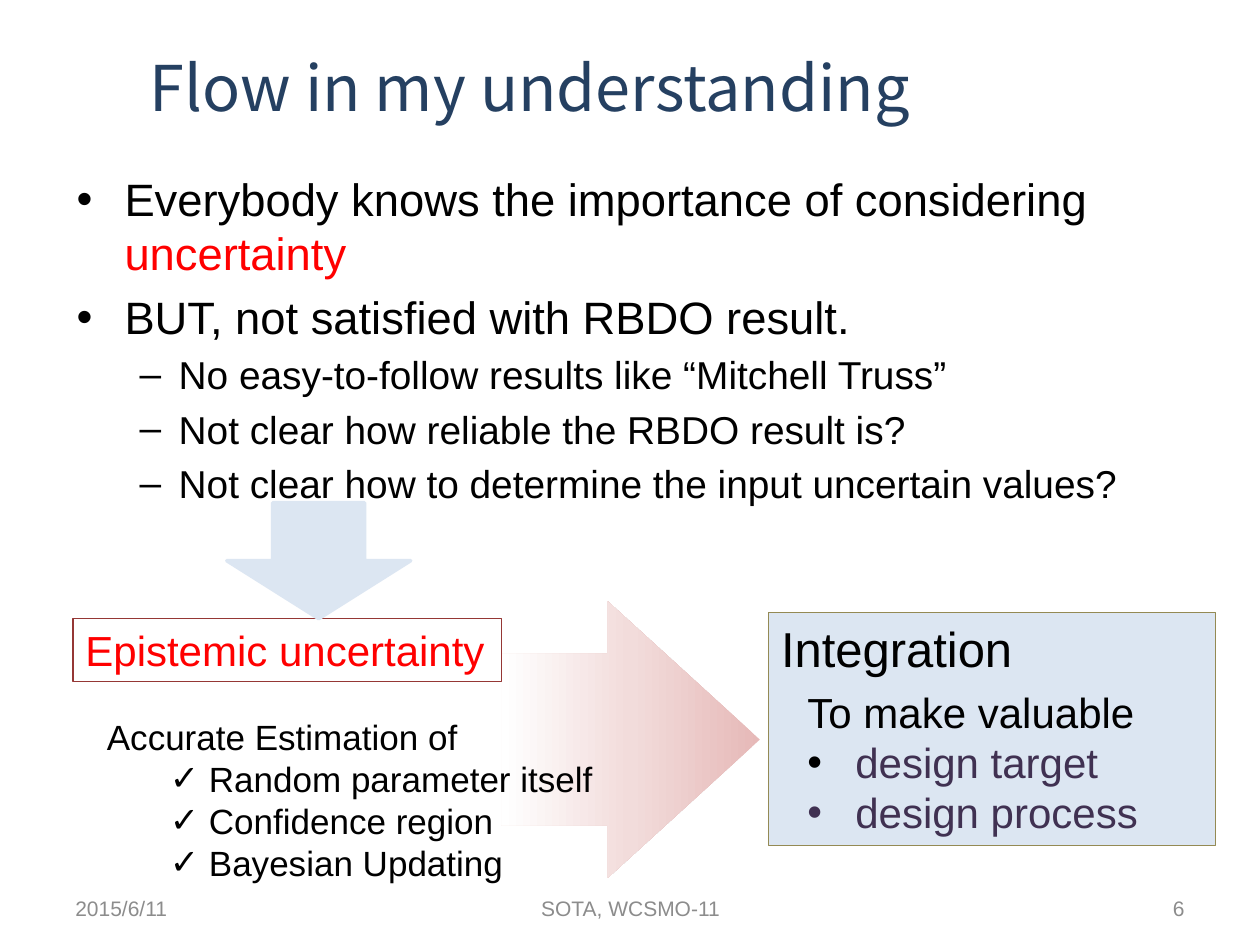
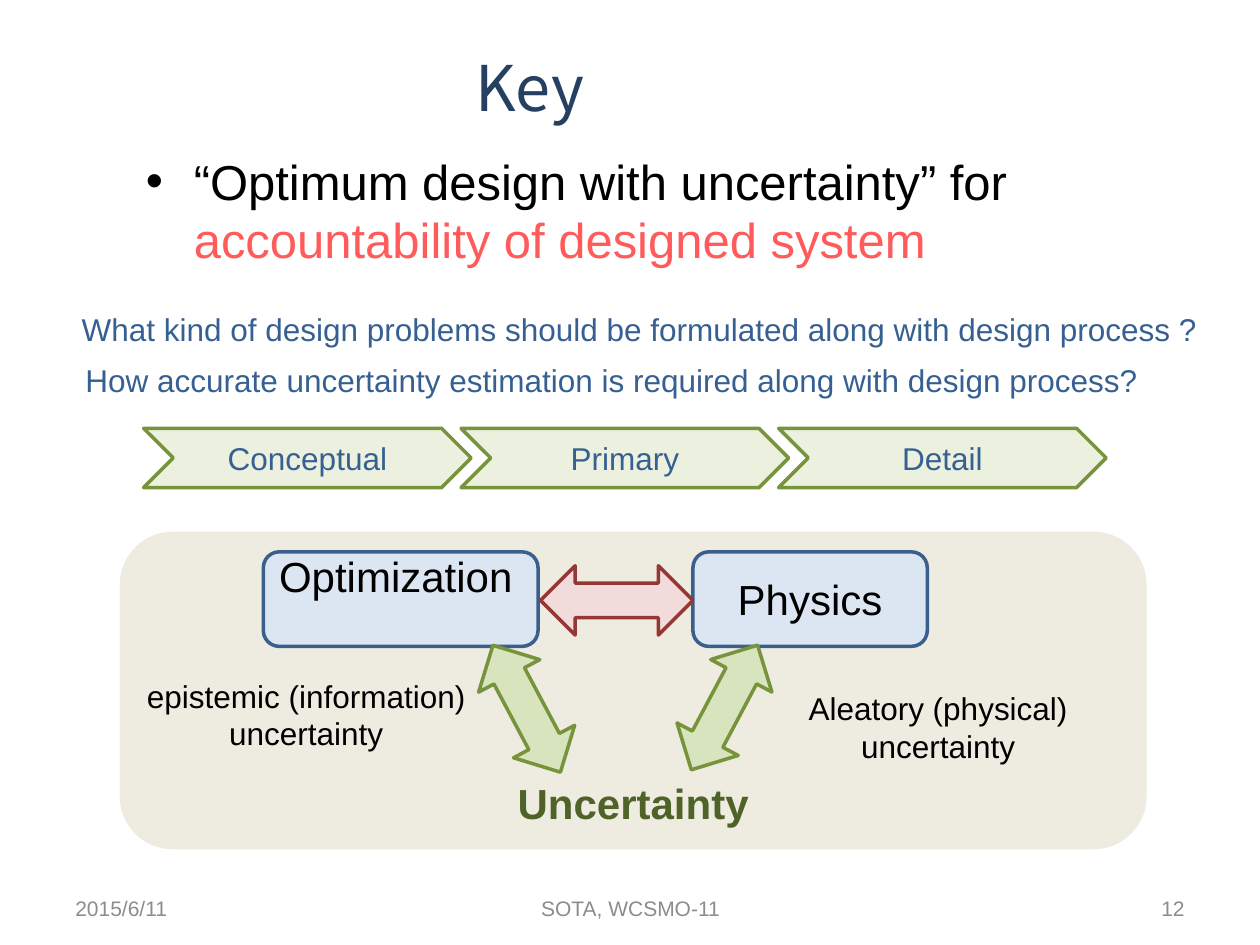
from copy import deepcopy

from lxml.etree import SubElement
from pptx import Presentation
from pptx.dml.color import RGBColor
from pptx.enum.shapes import MSO_SHAPE
from pptx.enum.text import MSO_ANCHOR, PP_ALIGN
from pptx.oxml.ns import qn
from pptx.util import Inches, Pt

BLACK = RGBColor(0x00, 0x00, 0x00)
WHITE = RGBColor(0xFF, 0xFF, 0xFF)
GRAY = RGBColor(0x8C, 0x8C, 0x8C)
NAVY = RGBColor(0x25, 0x40, 0x61)
BLUE = RGBColor(0x37, 0x60, 0x92)
BLUE_EDGE = RGBColor(0x3A, 0x5F, 0x8C)
PALE_BLUE = RGBColor(0xDC, 0xE6, 0xF2)
RED = RGBColor(0xFF, 0x00, 0x00)
CORAL = RGBColor(0xFF, 0x5B, 0x5B)
DARK_RED = RGBColor(0x95, 0x37, 0x35)
ROSE = RGBColor(0xE6, 0xB9, 0xB8)
PALE_ROSE = RGBColor(0xF2, 0xDC, 0xDB)
PURPLE = RGBColor(0x40, 0x31, 0x52)
OLIVE = RGBColor(0x94, 0x8A, 0x54)
CREAM = RGBColor(0xEE, 0xEC, 0xE1)
GREEN = RGBColor(0x77, 0x93, 0x3C)
DARK_GREEN = RGBColor(0x4F, 0x62, 0x28)
LIGHT_GREEN = RGBColor(0xD7, 0xE4, 0xBD)
PALE_GREEN = RGBColor(0xEB, 0xF1, 0xDE)

LEFT, CENTER, RIGHT = PP_ALIGN.LEFT, PP_ALIGN.CENTER, PP_ALIGN.RIGHT
TOP, MIDDLE, BOTTOM = MSO_ANCHOR.TOP, MSO_ANCHOR.MIDDLE, MSO_ANCHOR.BOTTOM


def place(slide, box, kind=None, fill=None, line=None, width=2, anchor=TOP, wrap=True):
    lengths = [Inches(value) for value in box]
    if kind is None:
        part = slide.shapes.add_textbox(*lengths)
    else:
        part = slide.shapes.add_shape(kind, *lengths)
        part.shadow.inherit = False
        if fill is None:
            part.fill.background()
        else:
            part.fill.solid()
            part.fill.fore_color.rgb = fill
        if line is None:
            part.line.fill.background()
        else:
            part.line.color.rgb = line
            part.line.width = Pt(width)
    part.text_frame.word_wrap = wrap
    part.text_frame.vertical_anchor = anchor
    return part


def write(part, *pieces, size=18, color=BLACK, font="Arial", bold=False, align=LEFT,
          leading=1.2, before=0, bullet=None, bullet_color=BLACK, margin=0, indent=0):
    frame = part.text_frame
    paragraph = frame.paragraphs[0] if not frame.text else frame.add_paragraph()
    properties = paragraph._p.get_or_add_pPr()
    properties.set("marL", str(Inches(margin)))
    properties.set("indent", str(Inches(indent)))
    if bullet:
        tint = SubElement(properties, qn("a:buClr"))
        SubElement(tint, qn("a:srgbClr"), val=str(bullet_color))
        SubElement(properties, qn("a:buFont"), typeface="Arial")
        SubElement(properties, qn("a:buChar"), char=bullet)
    paragraph.alignment = align
    paragraph.space_before = Pt(before)
    if leading:
        paragraph.line_spacing = Pt(round(leading * size, 1))
    for piece in pieces:
        words, tone = piece if isinstance(piece, tuple) else (piece, color)
        run = paragraph.add_run()
        run.text = words
        run.font.name = font
        run.font.size = Pt(size)
        run.font.bold = bold
        run.font.color.rgb = tone


deck = Presentation()
deck.slide_width, deck.slide_height = Inches(10), Inches(7.5)
flow, key = [deck.slides.add_slide(deck.slide_layouts[6]) for _ in range(2)]

to_integration = place(flow, (3.98, 4.77, 2.05, 2.2), MSO_SHAPE.RIGHT_ARROW, WHITE)
to_integration.adjustments[0] = 0.62
to_integration.adjustments[1] = 0.59
to_integration.fill.gradient()
to_integration.fill.gradient_angle = 180
first_stop = to_integration.fill._fill._gradFill.gsLst[0]
first_stop.addnext(deepcopy(first_stop))
fade = zip(to_integration.fill.gradient_stops, (0, 0.5, 1), (ROSE, PALE_ROSE, WHITE))
for stop, position, tone in fade:
    stop.position = position
    stop.color.rgb = tone

place(key, (0.95, 4.22, 8.15, 2.52), MSO_SHAPE.ROUNDED_RECTANGLE, CREAM, anchor=BOTTOM)
write(key.shapes[0], "Uncertainty", size=24, color=DARK_GREEN, bold=True, align=CENTER)

for slide, heading, number in ((flow, "Flow in my understanding", "6"), (key, "Key", "12")):
    title = place(slide, (0.5, 0.3, 7.41, 0.77), anchor=MIDDLE)
    write(title, heading, size=36, color=NAVY, font="Noto Sans CJK JP",
          align=CENTER, leading=None)
    for left, width, words, align in ((0.5, 2.33, "2015/6/11", LEFT),
                                      (3.42, 3.17, "SOTA, WCSMO-11", CENTER),
                                      (8.62, 0.88, number, RIGHT)):
        footer = place(slide, (left, 7.06, width, 0.29), anchor=MIDDLE)
        write(footer, words, size=12, color=GRAY, align=align)

motivation = place(flow, (0.51, 1.31, 8.82, 2.76))
main_point = dict(size=25.9, bullet="•", margin=0.38, indent=-0.38)
write(motivation, "Everybody knows the importance of considering ", ("uncertainty", RED),
      **main_point)
write(motivation, "BUT, not satisfied with RBDO result.", before=5.2, **main_point)
for doubt in ("No easy-to-follow results like “Mitchell Truss”",
              "Not clear how reliable the RBDO result is?",
              "Not clear how to determine the input uncertain values?"):
    write(motivation, doubt, size=22.2, before=4.4, bullet="–", margin=0.81, indent=-0.31)

epistemic = place(flow, (0.58, 4.91, 3.4, 0.5), MSO_SHAPE.RECTANGLE,
                  line=DARK_RED, width=0.75, anchor=MIDDLE)
write(epistemic, "Epistemic uncertainty", size=24, color=RED)
place(flow, (1.8, 3.99, 1.46, 0.92), MSO_SHAPE.DOWN_ARROW, PALE_BLUE, PALE_BLUE)

estimation = place(flow, (0.75, 5.63, 4.24, 1.45))
write(estimation, "Accurate Estimation of", size=20)
for target in ("Random parameter itself", "Confidence region", "Bayesian Updating"):
    write(estimation, target, size=20, bullet="✓", margin=0.81, indent=-0.31)

integration = place(flow, (6.1, 4.86, 3.55, 1.85), MSO_SHAPE.RECTANGLE,
                    PALE_BLUE, OLIVE, 0.75)
write(integration, "Integration", size=28)
write(integration, "To make valuable", size=24, before=5, margin=0.21)
for goal, dot in (("design target", BLACK), ("design process", PURPLE)):
    write(integration, goal, size=24, color=PURPLE, bullet="•", bullet_color=dot,
          margin=0.59, indent=-0.38)

message = place(key, (1.06, 1.15, 8.09, 1.18))
write(message, "“Optimum design with uncertainty” for ",
      ("accountability of designed system", CORAL),
      size=28, bullet="•", margin=0.38, indent=-0.38)

for left, top, width, words in (
        (0.55, 2.41, 9.14,
         "What kind of design problems should be formulated along with design process ?"),
        (0.58, 2.82, 8.56,
         "How accurate uncertainty estimation is required along with design process?")):
    question = place(key, (left, top, width, 0.4), wrap=False)
    write(question, words, color=BLUE)

for step, phase in enumerate(("Conceptual", "Primary", "Detail")):
    chevron = place(key, (1.14 + 2.52 * step, 3.4, 2.6, 0.47), MSO_SHAPE.CHEVRON,
                    PALE_GREEN, GREEN, anchor=MIDDLE)
    write(chevron, phase, color=BLUE, align=CENTER)

physics = place(key, (5.5, 4.38, 1.86, 0.75), MSO_SHAPE.ROUNDED_RECTANGLE,
                PALE_BLUE, BLUE_EDGE, anchor=MIDDLE)
write(physics, "Physics", size=24, align=CENTER)
optimization = place(key, (2.09, 4.38, 2.18, 0.75), MSO_SHAPE.ROUNDED_RECTANGLE,
                     PALE_BLUE, BLUE_EDGE)
optimization.text_frame.margin_top = 0
optimization.text_frame.margin_left = Inches(0.02)
write(optimization, "Optimization", size=24, align=CENTER, leading=1.05)

for box, angle, fill, edge in (((4.29, 4.49, 1.21, 0.55), 0, PALE_ROSE, DARK_RED),
                               ((5.19, 5.34, 1.12, 0.55), 298, LIGHT_GREEN, GREEN),
                               ((3.61, 5.35, 1.14, 0.55), 62, LIGHT_GREEN, GREEN)):
    link = place(key, box, MSO_SHAPE.LEFT_RIGHT_ARROW, fill, edge)
    link.rotation = angle

for box, category in (((6.27, 5.42, 2.35, 0.71), "Aleatory (physical)"),
                      ((0.99, 5.32, 2.88, 0.71), "epistemic (information)")):
    caption = place(key, box, wrap=False)
    for words in (category, "uncertainty"):
        write(caption, words, align=CENTER)

deck.save("out.pptx")
